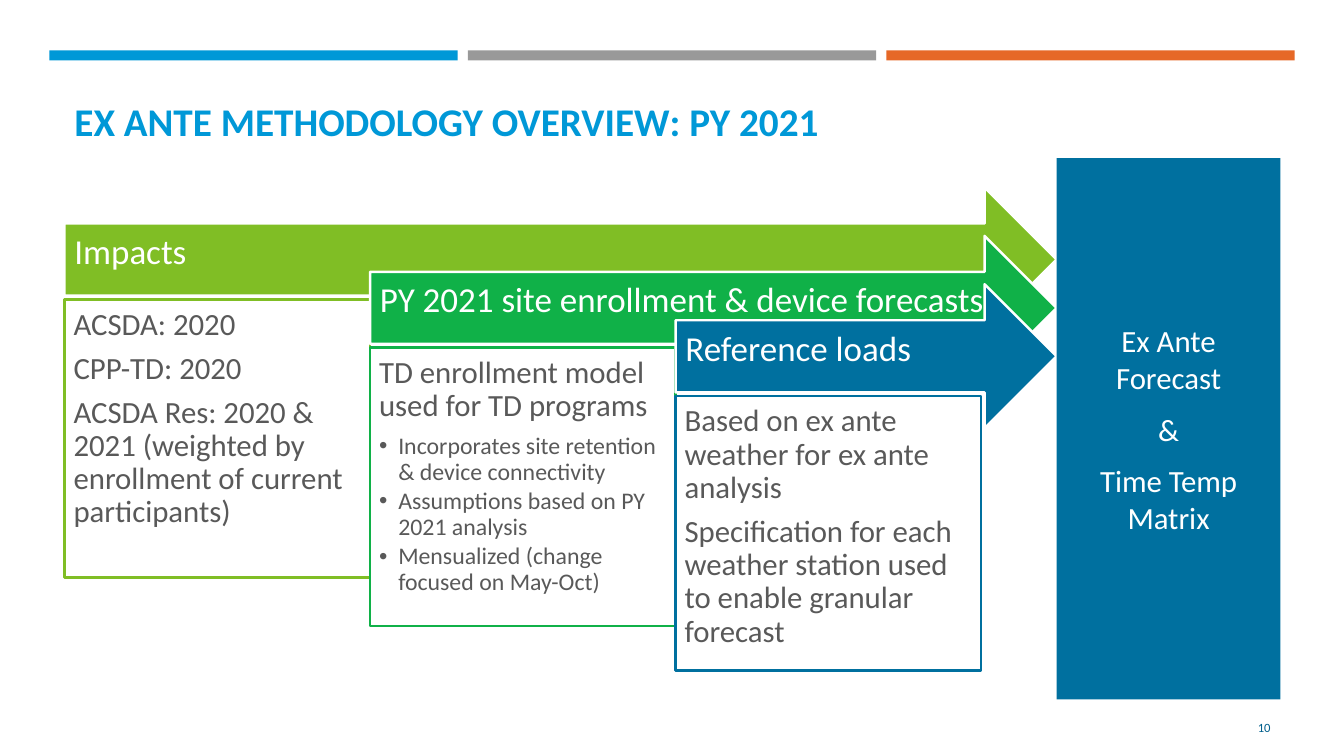
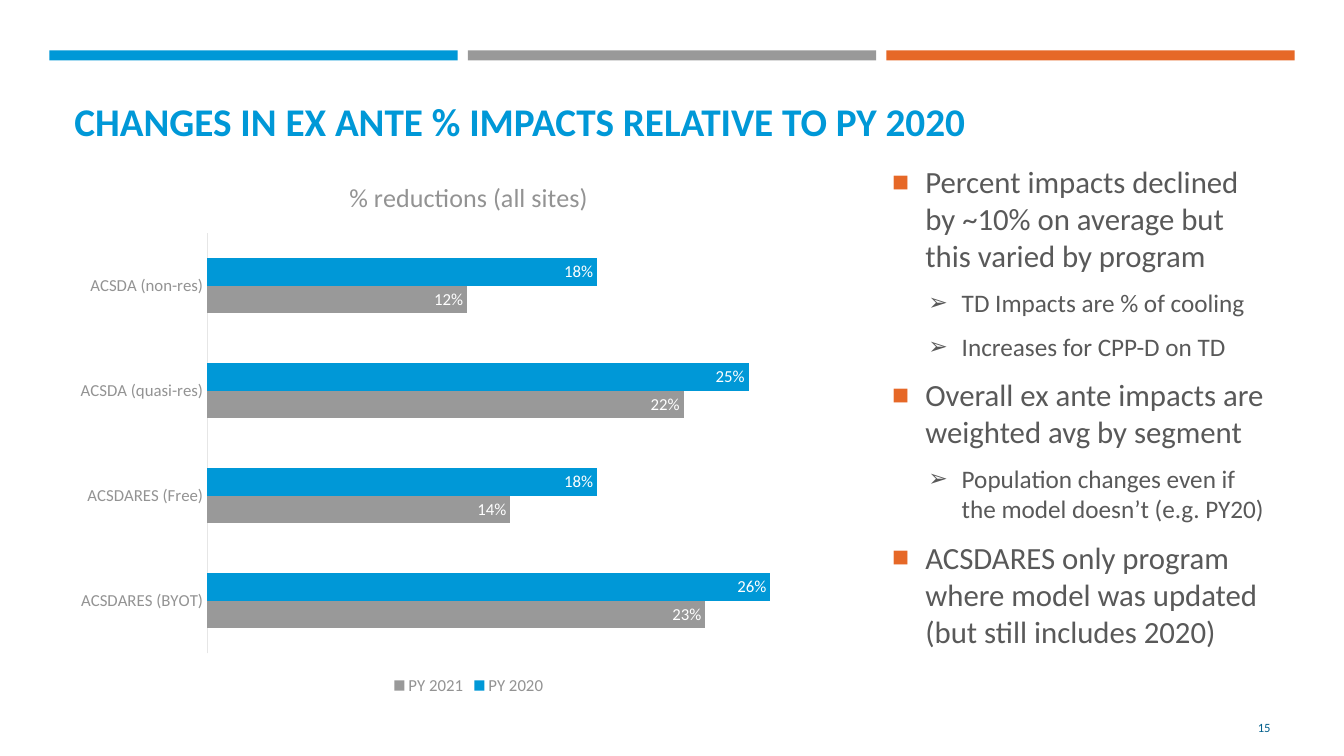
from lxml import etree
from pptx import Presentation
from pptx.chart.data import CategoryChartData as ChartData
from pptx.dml.color import RGBColor as RGB
from pptx.enum.chart import XL_CHART_TYPE as Kind, XL_LABEL_POSITION as Spot
from pptx.enum.chart import XL_LEGEND_POSITION as Legend, XL_TICK_MARK as Tick
from pptx.enum.chart import XL_TICK_LABEL_POSITION as TickLabel
from pptx.enum.shapes import MSO_SHAPE as Shape
from pptx.enum.text import MSO_ANCHOR as Anchor, PP_ALIGN as Align
from pptx.oxml.ns import qn
from pptx.util import Inches, Pt

FONT = "Calibri"
HUE = {
    "blue": "0098D7", "gray": "999999", "orange": "E66827", "white": "FFFFFF",
    "lime": "80BE25", "green": "10B148", "navy": "00709F", "page": "005F8C",
    "text": "595959", "soft": "939393", "axis": "E6E6E6",
}

# Content
TITLES = [
    ("EX ANTE METHODOLOGY OVERVIEW: PY 2021", 10),
    ("CHANGES IN EX ANTE % IMPACTS RELATIVE TO PY 2020", 15),
]

# (heading, colour, card height, [(level, text)])
STAGES = [
    ("Impacts", "lime", 2.76, [
        (0, "ACSDA: 2020"),
        (0, "CPP-TD: 2020"),
        (0, "ACSDA Res: 2020 & 2021 (weighted by enrollment of current participants)"),
    ]),
    ("PY 2021 site enrollment & device forecasts", "green", 2.76, [
        (0, "TD enrollment model used for TD programs"),
        (1, "Incorporates site retention & device connectivity"),
        (1, "Assumptions based on PY 2021 analysis"),
        (1, "Mensualized (change focused on May-Oct)"),
    ]),
    ("Reference loads", "navy", 2.72, [
        (0, "Based on ex ante weather for ex ante analysis"),
        (0, "Specification for each weather station used to enable granular forecast"),
    ]),
]
RESULT = ["Ex Ante Forecast", "&", "Time Temp Matrix"]

POINTS = [
    (0, "Percent impacts declined by ~10% on average but this varied by program"),
    (1, "TD Impacts are % of cooling"),
    (1, "Increases for CPP-D on TD"),
    (0, "Overall ex ante impacts are weighted avg by segment"),
    (1, "Population changes even if the model doesn’t (e.g. PY20)"),
    (0, "ACSDARES only program where model was updated (but still includes 2020)"),
]

CHART_TITLE = "% reductions (all sites)"
GROUPS = ["ACSDA (non-res)", "ACSDA (quasi-res)", "ACSDARES (Free)", "ACSDARES (BYOT)"]
SERIES = [
    ("PY 2020", "blue", [0.18, 0.25, 0.18, 0.26]),
    ("PY 2021", "gray", [0.12, 0.22, 0.14, 0.23]),
]

# Bullets by level: (mark, mark colour, size in %, left margin, hang)
CARD_MARKS = [None, ("•", "text", 100, 0.19, 0.19)]
LIST_MARKS = [("■", "orange", 92, 0.33, 0.33), ("➢", "text", 92, 0.69, 0.33)]

# Shared layout
LEFT, RIGHT = 0.64, 12.7
BODY_TOP, BODY_H = 1.57, 5.37


def color(name):
    return RGB.from_string(HUE[name])


def style(font, size, hue, bold=False):
    font.name, font.size, font.bold = FONT, Pt(size), bold
    font.color.rgb = color(hue)


def box(at):
    return [Inches(n) for n in at]


def frame(shape, anchor=Anchor.TOP, pads=(0.1, 0.05, 0.1, 0.05)):
    tf = shape.text_frame
    tf.word_wrap, tf.vertical_anchor = True, anchor
    (tf.margin_left, tf.margin_top,
     tf.margin_right, tf.margin_bottom) = box(pads)
    return tf


def add_mark(para, mark):
    char, hue, pct, left, hang = mark
    props = para._p.get_or_add_pPr()
    props.set("marL", str(Inches(left)))
    props.set("indent", str(-Inches(hang)))
    tint = etree.SubElement(props, qn("a:buClr"))
    etree.SubElement(tint, qn("a:srgbClr"), val=HUE[hue])
    etree.SubElement(props, qn("a:buSzPct"), val=str(pct * 1000))
    etree.SubElement(props, qn("a:buFont"), typeface="Arial")
    etree.SubElement(props, qn("a:buChar"), char=char)


def write(tf, lines, sizes, hue, marks=(None, None), before=0, after=(0, 0),
          leading=None, align=Align.LEFT, bold=False):
    """Fill a frame with (level, text) lines; sizes, marks and after go by level."""
    for i, (level, text) in enumerate(lines):
        para = tf.paragraphs[0] if i == 0 else tf.add_paragraph()
        para.text, para.level, para.alignment = text, level, align
        if marks[level]:
            add_mark(para, marks[level])
        size = sizes[level]
        para.space_before = Pt(round(size * before, 1) if i else 0)
        para.space_after = Pt(after[level])
        if leading:
            para.line_spacing = leading
        style(para.runs[0].font, size, hue, bold)


def add_block(slide, kind, at, fill, line=None):
    shape = slide.shapes.add_shape(kind, *box(at))
    shape.shadow.inherit = False
    shape.fill.solid()
    shape.fill.fore_color.rgb = color(fill)
    if line:
        shape.line.color.rgb = color(line)
        shape.line.width = Pt(1.75)
    else:
        shape.line.fill.background()
    return shape


def add_text(slide, at, anchor=Anchor.TOP):
    return frame(slide.shapes.add_textbox(*box(at)), anchor)


def add_page(deck, title, number):
    slide = deck.slides.add_slide(deck.slide_layouts[6])
    for i, hue in enumerate(("blue", "gray", "orange")):
        add_block(slide, Shape.RECTANGLE, (0.49 + i * 4.15, 0.5, 4.05, 0.1), hue)
    write(add_text(slide, (LEFT, 0.77, RIGHT - LEFT, 0.71), Anchor.BOTTOM),
          [(0, title)], [28], "blue", bold=True)
    write(add_text(slide, (11.55, 7.02, 1.15, 0.4), Anchor.MIDDLE),
          [(0, str(number))], [9], "page", align=Align.RIGHT)
    return slide


def add_stages(slide):
    tip, card_w, drop = 10.48, 3.03, 0.48
    for i, (head, hue, card_h, lines) in enumerate(STAGES):
        x, y = LEFT + i * card_w, 1.86 + i * drop
        arrow = add_block(slide, Shape.RIGHT_ARROW, (x, y, tip - x, 1.43), hue, "white")
        write(frame(arrow, Anchor.MIDDLE, (0.1, 0.1, 0.28, 0.23)),
              [(0, head)], [25], "white", after=(8.8, 0), leading=0.9)
        card = add_block(slide, Shape.RECTANGLE, (x, y + 1.11, card_w, card_h), "white", hue)
        write(frame(card, pads=[0.09] * 4), lines, (22, 17), "text",
              CARD_MARKS, after=(7.7, 2.6), leading=0.9)
    # Result panel at the arrow tips
    panel = add_block(slide, Shape.RECTANGLE, (tip, BODY_TOP, RIGHT - tip, BODY_H), "navy")
    write(frame(panel, Anchor.MIDDLE), [(0, text) for text in RESULT], [22], "white",
          before=0.2, after=(6, 6), align=Align.CENTER)


def add_bars(slide):
    data = ChartData(number_format="0%")
    data.categories = GROUPS
    for name, _, values in SERIES:
        data.add_series(name, values)
    at = box((LEFT, BODY_TOP, 8.02, BODY_H))
    chart = slide.shapes.add_chart(Kind.BAR_CLUSTERED, *at, data).chart
    style(chart.font, 10, "text")

    # Title and legend
    chart.has_title = True
    chart.chart_title.text_frame.text = CHART_TITLE
    style(chart.chart_title.text_frame.paragraphs[0].runs[0].font, 18.6, "soft")
    chart.has_legend = True
    chart.legend.position = Legend.BOTTOM
    chart.legend.include_in_layout = False
    style(chart.legend.font, 12, "soft")

    # Axes
    cats, vals = chart.category_axis, chart.value_axis
    cats.reverse_order = True
    cats.major_tick_mark = cats.minor_tick_mark = Tick.NONE
    cats.tick_label_position = TickLabel.NEXT_TO_AXIS
    style(cats.tick_labels.font, 12, "soft")
    cats.format.line.color.rgb = color("axis")
    cats.format.line.width = Pt(0.75)
    vals.visible = vals.has_major_gridlines = False
    vals.minimum_scale, vals.maximum_scale = 0, 0.3

    # Bars and their labels
    plot = chart.plots[0]
    plot.gap_width, plot.overlap, plot.vary_by_categories = 182, 0, False
    for series, (_, hue, _) in zip(plot.series, SERIES):
        series.format.fill.solid()
        series.format.fill.fore_color.rgb = color(hue)
        labels = series.data_labels
        labels.show_value, labels.position = True, Spot.INSIDE_END
        labels.number_format, labels.number_format_is_linked = "0%", False
        style(labels.font, 12, "white")


def main():
    deck = Presentation()
    deck.slide_width, deck.slide_height = Inches(13.33), Inches(7.5)
    flow, change = [add_page(deck, *page) for page in TITLES]
    add_stages(flow)
    write(add_text(change, (8.75, BODY_TOP, RIGHT - 8.75, BODY_H)), POINTS,
          (22, 18), "text", LIST_MARKS, before=0.2, after=(6, 6))
    add_bars(change)
    deck.save("out.pptx")


if __name__ == "__main__":
    main()
